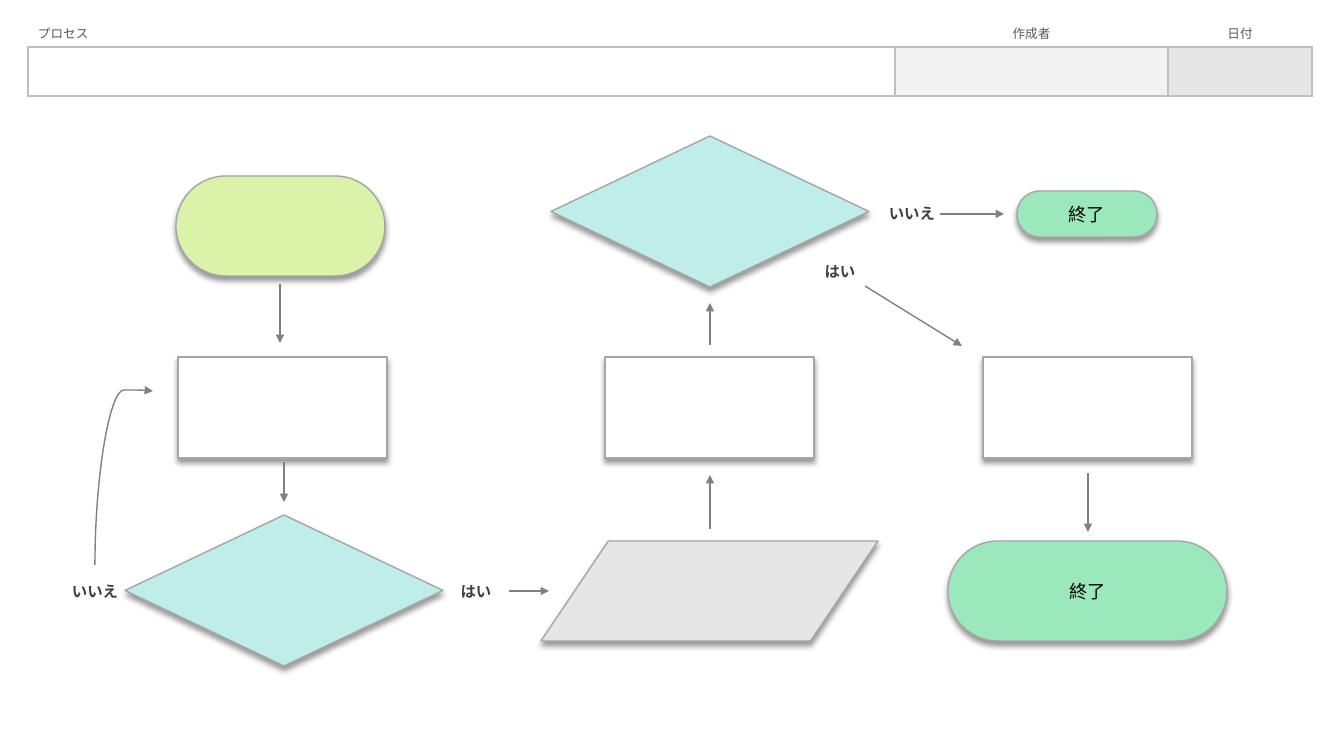
from lxml import etree
from pptx import Presentation
from pptx import util as u
from pptx.dml.color import RGBColor
from pptx.enum import shapes, text
from pptx.oxml import parse_xml
from pptx.oxml.ns import nsdecls, qn

EMU_PER_PX = 914400 / 100.8
COLORS = {
    "start": "DBF2A9", "decision": "BFEEEA", "end": "9CE8BD", "data": "E7E6E6",
    "white": "FFFFFF", "author": "F2F2F2", "date": "E6E6E6",
    "outline": "A6A6A6", "arrow": "808080", "border": "BFBFBF",
    "label": "404040", "header": "595959", "black": "000000",
}
KINDS = shapes.MSO_SHAPE
LINKS = shapes.MSO_CONNECTOR
CENTER = text.PP_ALIGN.CENTER
MIDDLE = text.MSO_ANCHOR.MIDDLE
CJK_FONT = "Noto Sans CJK JP"
HEADER_FONT = "Quicksand"


def px(*values):
    return [u.Emu(round(value * EMU_PER_PX)) for value in values]


def rgb(name):
    return RGBColor.from_string(COLORS[name])


def apply(target, **values):
    for name, value in values.items():
        setattr(target, name, value)


class FlowSlide:
    def __init__(self, slide):
        self.shapes = slide.shapes

    def add_words(self, para, words, size, color, bold=False, font=CJK_FONT, align=CENTER):
        para.alignment = align
        span = para.add_run()
        span.text = words
        apply(span.font, name=font, size=u.Pt(size), bold=bold)
        span.font.color.rgb = rgb(color)
        etree.SubElement(span.font._element, qn("a:ea"), typeface=CJK_FONT)

    def frame(self, box):
        margins = {f"margin_{side}": px(2)[0] for side in ("left", "top", "right", "bottom")}
        apply(box.text_frame, word_wrap=True, vertical_anchor=MIDDLE, **margins)
        return box.text_frame.paragraphs[0]

    def step(self, kind, place, color, words=""):
        box = self.shapes.add_shape(kind, *px(*place))
        if kind == KINDS.ROUNDED_RECTANGLE:
            box.adjustments[0] = 0.5
        box.fill.solid()
        box.fill.fore_color.rgb = rgb(color)
        box.line.color.rgb = rgb("outline")
        box.line.width = u.Pt(1)
        box.shadow.inherit = False
        box._element.spPr.find(qn("a:effectLst")).append(parse_xml(
            f'<a:outerShdw {nsdecls("a")} blurRad="{u.Pt(4)}" dist="{u.Pt(3)}" dir="5400000" '
            'algn="t" rotWithShape="0"><a:srgbClr val="000000"><a:alpha val="40000"/>'
            '</a:srgbClr></a:outerShdw>'))
        if words:
            self.add_words(self.frame(box), words, 13, "black")

    def label(self, words, left, top, width=80):
        box = self.shapes.add_textbox(*px(left, top, width, 50))
        self.add_words(self.frame(box), words, 11, "label", bold=True)

    def arrow(self, ends, kind=LINKS.STRAIGHT):
        link = self.shapes.add_connector(kind, *px(*ends))
        link.line.color.rgb = rgb("arrow")
        link.line.width = u.Pt(1)
        props = link._element.spPr
        etree.SubElement(props.find(qn("a:ln")), qn("a:tailEnd"), type="triangle")
        etree.SubElement(props, qn("a:effectLst"))
        return link

    def turned_curve(self, ends, bend):
        props = self.arrow(ends, LINKS.CURVE)._element.spPr
        props.find(qn("a:xfrm")).set("rot", "5400000")
        guides = props.find(qn("a:prstGeom")).get_or_add_avLst()
        etree.SubElement(guides, qn("a:gd"), name="adj1", fmla=f"val {bend}")

    def border(self, cell, widths):
        for side, width in widths.items():
            cell._tc.get_or_add_tcPr().append(parse_xml(
                f'<a:ln{side} {nsdecls("a")} w="{u.Pt(width)}"><a:solidFill>'
                f'<a:srgbClr val="{COLORS["border"]}"/></a:solidFill></a:ln{side}>'))

    def header_table(self, place, columns, heights):
        table = self.shapes.add_table(2, len(columns), *px(*place)).table
        apply(table, first_row=False, horz_banding=False)
        for row, height in zip(table.rows, px(*heights)):
            row.height = height
        for index, (words, width, color, align, indent) in enumerate(columns):
            table.columns[index].width = px(width)[0]
            head, body = table.cell(0, index), table.cell(1, index)
            for cell in (head, body):
                apply(cell, vertical_anchor=MIDDLE, margin_left=px(indent)[0],
                      margin_top=px(1)[0], margin_right=px(1)[0], margin_bottom=0)
            self.border(head, {"B": 1})
            head.fill.background()
            self.add_words(head.text_frame.paragraphs[0], words, 9, "header",
                           font=HEADER_FONT, align=align)
            self.border(body, {"L": 1, "R": 1, "T": 1, "B": 2.25})
            body.fill.solid()
            body.fill.fore_color.rgb = rgb(color)
            body.text_frame.paragraphs[0].font.size = u.Pt(9)


def main():
    deck = Presentation()
    deck.slide_width, deck.slide_height = px(1344, 756)
    page = FlowSlide(deck.slides.add_slide(deck.slide_layouts[6]))

    page.step(KINDS.ROUNDED_RECTANGLE, (176, 176, 209, 100), "start")
    for left in (178, 605, 983):
        page.step(KINDS.FLOWCHART_PROCESS, (left, 357, 209, 101), "white")
    for left, top in ((125, 515), (551, 136)):
        page.step(KINDS.FLOWCHART_DECISION, (left, top, 318, 151), "decision")
    page.step(KINDS.FLOWCHART_DATA, (541, 541, 337, 100), "data")
    for place in ((1017, 191, 140, 46), (948, 541, 279, 100)):
        page.step(KINDS.ROUNDED_RECTANGLE, place, "end", "終了")

    page.label("いいえ", 53, 566, 84)
    page.label("はい", 436, 566)
    page.label("はい", 800, 246)
    page.label("いいえ", 872, 188)

    for ends in (
        (280, 284, 280, 343), (284, 462, 284, 502), (509, 591, 549, 591),
        (710, 529, 710, 475), (710, 345, 710, 303), (865, 286, 962, 346),
        (940, 214, 1004, 214), (1088, 473, 1088, 532),
    ):
        page.arrow(ends)
    page.turned_curve((211, 507, 37, 449), 100600)

    page.header_table((28, 19, 1284, 77), (
        ("プロセス", 867, "white", text.PP_ALIGN.LEFT, 10),
        ("作成者", 273, "author", CENTER, 1),
        ("日付", 144, "date", CENTER, 1),
    ), (28, 49))
    deck.save("out.pptx")


if __name__ == "__main__":
    main()
